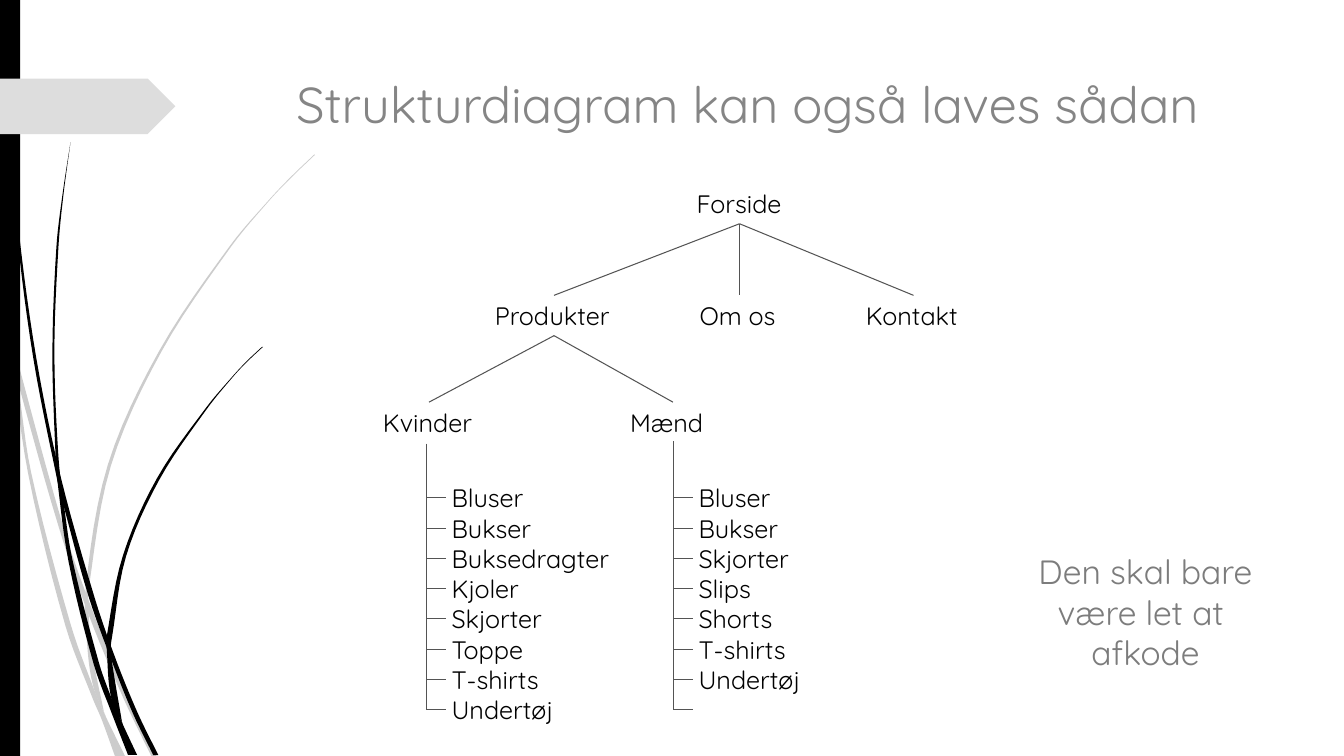
from math import dist

from lxml.etree import SubElement
from pptx import Presentation
from pptx.dml.color import RGBColor
from pptx.enum.shapes import MSO_CONNECTOR as Connector, MSO_SHAPE as Shape
from pptx.enum.text import MSO_AUTO_SIZE as AutoSize, PP_ALIGN as Align
from pptx.oxml.ns import qn
from pptx.util import Pt

PX = 9144
WIDTH, HEIGHT = 1333, 750
FONT = "Quicksand"
BLACK = RGBColor(0x00, 0x00, 0x00)
PALE = RGBColor(0xCC, 0xCC, 0xCC)
TAG_GRAY = RGBColor(0xDD, 0xDD, 0xDD)
TITLE_GRAY = RGBColor(0x85, 0x85, 0x85)
NOTE_GRAY = RGBColor(0x7C, 0x7C, 0x7C)
LINE_GRAY = RGBColor(0x54, 0x54, 0x54)

TITLE = "Strukturdiagram kan også laves sådan"
NOTE = ["Den skal bare\vvære let at ", "afkode"]

NODES = {
    "Forside": (681, 182, 105),
    "Produkter": (481, 293, 137),
    "Om os": (684, 293, 99),
    "Kontakt": (849, 293, 114),
    "Kvinder": (370, 399, 111),
    "Mænd": (615, 399, 105),
}
NODE_HEIGHT = 40
CHILDREN = {
    "Forside": ["Produkter", "Om os", "Kontakt"],
    "Produkter": ["Kvinder", "Mænd"],
}
LISTS = [
    (423, 440, 181, ["Bluser", "Bukser", "Buksedragter", "Kjoler",
                     "Skjorter", "Toppe", "T-shirts", "Undertøj"]),
    (668, 438, 124, ["Bluser", "Bukser", "Skjorter", "Slips",
                     "Shorts", "T-shirts", "Undertøj"]),
]
LIST_TOP, LIST_INDENT, ROW = 474, 15, 30
TICK_TOP, TICK_COUNT, TICK_LENGTH = 494, 8, 19

BLADES = [
    (PALE,
     [(0, 282), (9, 322), (14, 345), (62, 520), (88, 596), (127, 692), (155, 750)],
     [(150, 750), (123, 694), (88, 610), (58, 522), (17, 376), (10, 344), (0, 299)]),
    (PALE,
     [(11, 350), (17, 376), (31, 469), (70, 619), (93, 683), (105, 711), (124, 750)],
     [(114, 750), (101, 714), (92, 693), (65, 621), (28, 470), (11, 350)]),
    (PALE,
     [(312, 153), (289, 175), (268, 197), (228, 244), (158, 348), (107, 461),
      (85, 584), (87, 646), (93, 683), (105, 711)],
     [(103, 706), (91, 646), (88, 610), (88, 584), (110, 462), (160, 349),
      (229, 245), (268, 198), (290, 175), (312, 154)]),
    (BLACK,
     [(4, 0), (5, 48), (8, 109), (19, 232), (36, 355), (60, 472), (93, 590),
      (113, 649), (136, 706), (157, 749)],
     [(152, 749), (132, 708), (111, 656), (88, 592), (64, 505), (57, 477),
      (33, 355), (17, 233), (7, 110), (4, 48), (3, 0)]),
    (BLACK,
     [(70, 141), (62, 193), (56, 245), (52, 349), (55, 449), (57, 477), (68, 557),
      (93, 659), (111, 708), (127, 749)],
     [(136, 749), (122, 719), (110, 691), (98, 657), (72, 556), (64, 505),
      (58, 453), (54, 349), (58, 245), (63, 193), (70, 141)]),
    (BLACK,
     [(260, 344), (245, 358), (231, 373), (204, 405), (156, 474), (122, 551),
      (106, 631), (106, 645), (110, 691), (122, 719)],
     [(121, 716), (111, 656), (110, 641), (111, 633), (125, 552), (158, 476),
      (205, 406), (231, 374), (245, 359), (261, 344)]),
]
CURVE_STEPS = 6


def emu(*lengths):
    return [round(length * PX) for length in lengths]


def smooth_edge(points):
    last = len(points) - 1
    slopes = []
    for index in range(last + 1):
        before, after = points[max(index - 1, 0)], points[min(index + 1, last)]
        span = dist(before, points[index]) + dist(points[index], after)
        slopes.append([(b - a) / span for a, b in zip(before, after)])
    edge = [points[0]]
    for index in range(last):
        start, end = points[index], points[index + 1]
        length = dist(start, end)
        for step in range(1, CURVE_STEPS + 1):
            t = step / CURVE_STEPS
            rise = t * t * (3 - 2 * t)
            leave, arrive = t * (1 - t) ** 2 * length, t * t * (t - 1) * length
            edge.append(tuple(
                a + (b - a) * rise + leave * m + arrive * n
                for a, b, m, n in zip(start, end, slopes[index], slopes[index + 1])))
    return edge


def paint(shape, color):
    shape.shadow.inherit = False
    shape.fill.solid()
    shape.fill.fore_color.rgb = color
    shape.line.fill.background()


def add_blade(slide, color, outer, inner):
    outline = [emu(*point) for point in smooth_edge(outer) + smooth_edge(inner)]
    builder = slide.shapes.build_freeform(*outline[0], scale=1.0)
    builder.add_line_segments(outline[1:], close=True)
    paint(builder.convert_to_shape(), color)


def add_block(slide, shape_type, box, color):
    paint(slide.shapes.add_shape(shape_type, *emu(*box)), color)


def add_text(slide, lines, box, size, color, align=Align.LEFT, wrap=False):
    frame = slide.shapes.add_textbox(*emu(*box)).text_frame
    frame.word_wrap = wrap
    frame.auto_size = AutoSize.SHAPE_TO_FIT_TEXT
    frame.text = "\n".join(lines)
    for paragraph in frame.paragraphs:
        paragraph.alignment = align
        paragraph.font.name = FONT
        paragraph.font.size = Pt(size)
        paragraph.font.color.rgb = color


def add_line(slide, start, end):
    line = slide.shapes.add_connector(Connector.STRAIGHT, *emu(*start, *end))
    line.line.color.rgb = LINE_GRAY
    line.line.width = Pt(0.75)
    SubElement(line._element.spPr, qn("a:effectLst"))


def main():
    presentation = Presentation()
    presentation.slide_width, presentation.slide_height = emu(WIDTH, HEIGHT)
    slide = presentation.slides.add_slide(presentation.slide_layouts[6])

    for blade in BLADES:
        add_blade(slide, *blade)
    add_block(slide, Shape.RECTANGLE, (0, 0, 20, HEIGHT), BLACK)
    add_block(slide, Shape.PENTAGON, (0, 78, 174, 55), TAG_GRAY)
    add_text(slide, [TITLE], (284, 68, 975, 70), 36, TITLE_GRAY, wrap=True)

    for name, (left, top, width) in NODES.items():
        add_text(slide, [name], (left, top, width, NODE_HEIGHT), 18, BLACK)
    for parent, children in CHILDREN.items():
        left, top, width = NODES[parent]
        start = (left + width / 2, top + NODE_HEIGHT)
        for child in children:
            child_left, child_top, child_width = NODES[child]
            add_line(slide, start, (child_left + child_width / 2, child_top))

    for spine, spine_top, width, items in LISTS:
        box = (spine + LIST_INDENT, LIST_TOP, width, 12 + ROW * len(items))
        add_text(slide, items, box, 18, BLACK)
        ticks = [TICK_TOP + ROW * index for index in range(TICK_COUNT)]
        add_line(slide, (spine, spine_top), (spine, ticks[-1]))
        for tick in ticks:
            add_line(slide, (spine, tick), (spine + TICK_LENGTH, tick))

    add_text(slide, NOTE, (1014, 542, 244, 131), 24, NOTE_GRAY, Align.CENTER, True)
    presentation.save("out.pptx")


if __name__ == "__main__":
    main()
